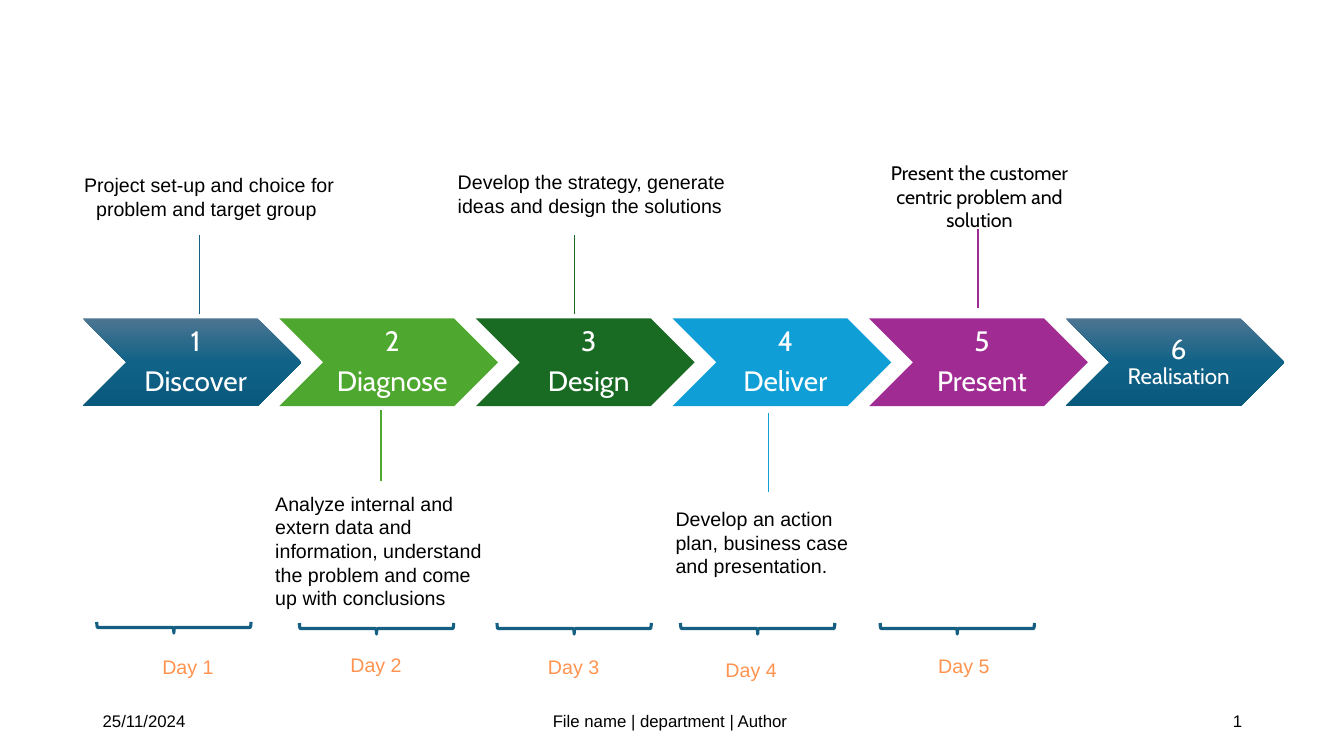
"""Builds a six-step project timeline with notes and day braces."""
from copy import deepcopy

from pptx import Presentation, util as u
from pptx.dml.color import RGBColor
from pptx.enum import shapes, text
from pptx.oxml import parse_xml
from pptx.oxml.ns import nsdecls, qn

HUES = {
    "black": "000000", "white": "FFFFFF", "teal": "156082", "lime": "4EA72E",
    "green": "196B24", "sky": "0F9ED5", "plum": "A02B93", "day": "FF934F",
    "top": "4C7591", "mid": "106287", "low": "09597D",
}
SIDES = ("margin_left", "margin_top", "margin_right", "margin_bottom")
LEFT, MID, RIGHT = text.PP_ALIGN.LEFT, text.PP_ALIGN.CENTER, text.PP_ALIGN.RIGHT
PLAIN = {"pad": (0.08,) * 4, "anchor": text.MSO_ANCHOR.TOP,
         "size": text.MSO_AUTO_SIZE.SHAPE_TO_FIT_TEXT, "para": {}}
FOOT = {"pad": (0.1, 0.05, 0.1, 0.05), "anchor": text.MSO_ANCHOR.MIDDLE,
        "size": text.MSO_AUTO_SIZE.NONE, "para": {}}
STEP = {**FOOT, "pad": (0.09, 0.03, 0.03, 0.03),
        "para": {"line_spacing": 0.9, "space_after": u.Pt(7)}}


def apply(item, vals):
    """Set each named value on the item."""
    for name, val in vals.items():
        setattr(item, name, val)


def hue(name):
    """Return the named colour."""
    return RGBColor.from_string(HUES[name])


class Deck:
    """Holds the style and the current slide."""

    def __init__(self):
        """Open a blank wide slide."""
        self.file = Presentation()
        apply(self.file, {"slide_width": u.Inches(13.33), "slide_height": u.Inches(7.5)})
        self.slide = self.file.slides.add_slide(self.file.slide_layouts[6])
        self.font = "Arial"

    def label(self, box, paras, style=PLAIN, align=MID, tint="black", font=None, home=None):
        """Add a text box; each paragraph is a list of (words, size) runs."""
        shape = (home or self.slide.shapes).add_textbox(*map(u.Inches, box))
        frame = shape.text_frame
        apply(frame, {"word_wrap": True, "auto_size": style["size"],
                      "vertical_anchor": style["anchor"]})
        apply(frame, dict(zip(SIDES, map(u.Inches, style["pad"]))))
        for i, runs in enumerate(paras):
            para = frame.add_paragraph() if i else frame.paragraphs[0]
            apply(para, {"alignment": align, **style["para"]})
            for words, size in runs:
                run = para.add_run()
                run.text = words
                apply(run.font, {"name": font or self.font, "size": u.Pt(size)})
                run.font.color.rgb = hue(tint)

    def blend(self, fill, shape):
        """Give the shape a three-stop vertical gradient."""
        fill.gradient()
        fill.gradient_angle = 270
        stops = shape._element.spPr.find(".//" + qn("a:gsLst"))
        stops.append(deepcopy(stops[-1]))
        for stop, pos, name in zip(fill.gradient_stops, (0, 0.5, 1), ("top", "mid", "low")):
            stop.position = pos
            stop.color.rgb = hue(name)

    def step(self, home, x, paras, tint):
        """Add one chevron with its caption."""
        shape = home.add_shape(shapes.MSO_SHAPE.CHEVRON,
                               *map(u.Inches, (x, 3.16, 2.17, 0.87)))
        shape.shadow.inherit = False
        shape.line.fill.background()
        if tint:
            shape.fill.solid()
            shape.fill.fore_color.rgb = hue(tint)
        else:
            self.blend(shape.fill, shape)
        self.label((x + 0.44, 3.16, 1.3, 0.87), paras, STEP,
                   tint="white", font="Cabin", home=home)

    def stem(self, x, start, end, tint):
        """Add a vertical line between a step and its note."""
        line = self.slide.shapes.add_connector(
            shapes.MSO_CONNECTOR.STRAIGHT, *map(u.Inches, (x, start, x, end)))
        line.line.color.rgb = hue(tint)
        line.line.width = u.Pt(1)
        line._element.spPr.append(parse_xml(f"<a:effectLst {nsdecls('a')}/>"))

    def brace(self, x, y):
        """Add a brace turned to open upward."""
        shape = self.slide.shapes.add_shape(shapes.MSO_SHAPE.LEFT_BRACE,
                                            *map(u.Inches, (x, y, 0.11, 1.53)))
        shape.rotation = 270
        shape.shadow.inherit = False
        shape.fill.background()
        shape.line.color.rgb = hue("teal")
        shape.line.width = u.Pt(2.25)


STEPS = [("Discover", None), ("Diagnose", "lime"), ("Design", "green"),
         ("Deliver", "sky"), ("Present", "plum")]
NOTES = [
    ((0.42, 1.64, 3.31, 0.63), "Project set-up and choice for problem and target group ",
     MID, "Arial"),
    ((2.65, 4.8, 2.32, 1.34), "Analyze internal and extern data and information, "
     "understand the problem and come up with conclusions", LEFT, "Arial"),
    ((4.46, 1.61, 2.99, 0.63), "Develop the strategy, generate ideas and design the solutions",
     LEFT, "Arial"),
    ((6.62, 4.95, 1.89, 0.87), "Develop an action plan, business case and presentation.",
     LEFT, "Arial"),
    ((8.59, 1.52, 2.25, 0.87), "Present the customer centric problem and solution",
     MID, "Cabin"),
]
STEMS = [(1.98, 3.12, 2.33, "teal"), (3.78, 4.07, 4.77, "lime"), (5.7, 3.12, 2.33, "green"),
         (7.62, 4.88, 4.1, "sky"), (9.7, 3.06, 2.27, "plum")]
DAYS = [(1.67, 5.46, 1.53, 6.42, 1.67, LEFT), (3.68, 5.47, 2.71, 6.4, 2.04, MID),
        (5.64, 5.47, 4.47, 6.42, 2.44, MID), (7.46, 5.47, 6.3, 6.45, 2.3, MID),
        (9.44, 5.47, 8.41, 6.41, 2.3, MID)]
FEET = [(0.92, 3, "25/11/2024", LEFT), (4.42, 4.5, "File name | department | Author ", MID),
        (9.42, 3, "1", RIGHT)]


def main():
    """Build and save the slide."""
    deck = Deck()
    for x, wide, words, align in FEET:
        deck.label((x, 6.95, wide, 0.4), [[(words, 12)]], FOOT, align)
    home = deck.slide.shapes.add_group_shape().shapes
    rows = [([[(str(i), 20)], [(name, 20)]], tint) for i, (name, tint) in enumerate(STEPS, 1)]
    rows.append(([[("6 ", 20), ("Realisation", 16)]], None))
    for i, (paras, tint) in enumerate(rows):
        deck.step(home, 0.82 + 1.95 * i, paras, tint)
    for stem in STEMS:
        deck.stem(*stem)
    for box, words, align, font in NOTES:
        deck.label(box, [[(words, 14)]], align=align, font=font)
    for i, (x, y, left, top, wide, align) in enumerate(DAYS, 1):
        deck.brace(x, y)
        deck.label((left, top, wide, 0.39), [[(f"Day {i}", 14)]], align=align, tint="day")
    deck.file.save("out.pptx")


if __name__ == "__main__":
    main()
